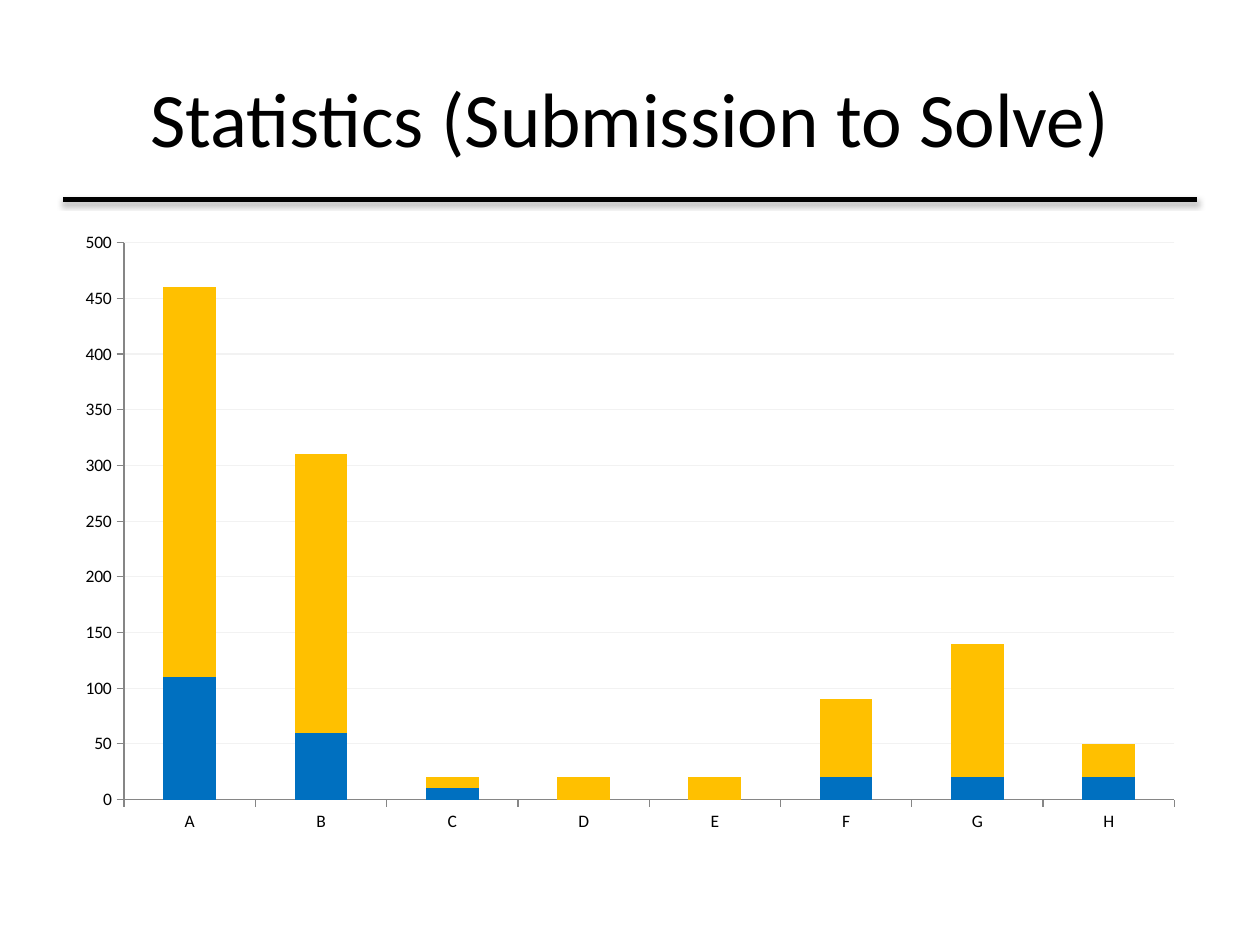
from lxml.etree import SubElement
from pptx import Presentation
from pptx.chart.data import CategoryChartData
from pptx.dml.color import RGBColor
from pptx.enum.chart import XL_CHART_TYPE, XL_TICK_MARK
from pptx.enum.shapes import MSO_CONNECTOR
from pptx.enum.text import MSO_ANCHOR, PP_ALIGN
from pptx.oxml.ns import qn
from pptx.util import Pt

FONT = "Calibri"
LEFT, WIDTH = Pt(36), Pt(648)
PROBLEMS = "ABCDEFGH"
SERIES = [
    ("Series 1", "0070C0", [110, 60, 10, 0, 0, 20, 20, 20]),
    ("Series 2", "FFC000", [350, 250, 10, 20, 20, 70, 120, 30]),
]


def color(hex_string):
    return RGBColor.from_string(hex_string)


def style_font(font, size):
    font.name = FONT
    font.size = Pt(size)
    font.color.rgb = color("000000")


def style_line(line, hex_string, width):
    line.color.rgb = color(hex_string)
    line.width = Pt(width)


def add_title(page, text):
    title = page.shapes.title
    title.left, title.top, title.width, title.height = LEFT, Pt(21.6), WIDTH, Pt(90)
    title.text_frame.text = text
    title.text_frame.vertical_anchor = MSO_ANCHOR.MIDDLE
    paragraph = title.text_frame.paragraphs[0]
    paragraph.alignment = PP_ALIGN.CENTER
    style_font(paragraph.runs[0].font, 44)


def add_soft_shadow(shape):
    """Drop a blurred, 35% black shadow straight below the shape."""
    effects = SubElement(shape._element.spPr, qn("a:effectLst"))
    shadow = SubElement(effects, qn("a:outerShdw"), blurRad=str(Pt(3.1)),
                        dist=str(Pt(1.8)), dir="5400000", rotWithShape="0")
    black = SubElement(shadow, qn("a:srgbClr"), val="000000")
    SubElement(black, qn("a:alpha"), val="35000")


def add_rule(page, top):
    rule = page.shapes.add_connector(
        MSO_CONNECTOR.STRAIGHT, LEFT, top, LEFT + WIDTH, top)
    style_line(rule.line, "000000", 3)
    add_soft_shadow(rule)


def style_axis(axis):
    axis.major_tick_mark = XL_TICK_MARK.OUTSIDE
    axis.minor_tick_mark = XL_TICK_MARK.NONE
    style_line(axis.format.line, "868686", 0.75)
    style_font(axis.tick_labels.font, 10)


def add_stacked_chart(page):
    data = CategoryChartData()
    data.categories = PROBLEMS
    for name, _, values in SERIES:
        data.add_series(name, values)
    chart = page.shapes.add_chart(
        XL_CHART_TYPE.COLUMN_STACKED, LEFT, Pt(126), WIDTH, Pt(356.4), data).chart
    chart.has_legend = False
    chart.has_title = False
    style_font(chart.font, 10)

    plot = chart.plots[0]
    plot.gap_width = 150
    plot.overlap = 100
    plot.vary_by_categories = False
    for series, (_, fill, _) in zip(plot.series, SERIES):
        series.format.fill.solid()
        series.format.fill.fore_color.rgb = color(fill)

    style_axis(chart.category_axis)
    value_axis = chart.value_axis
    style_axis(value_axis)
    value_axis.minimum_scale = 0
    value_axis.maximum_scale = 500
    value_axis.major_unit = 50
    value_axis.has_major_gridlines = True
    style_line(value_axis.major_gridlines.format.line, "F2F2F2", 0.75)


def main():
    deck = Presentation()
    deck.slide_width, deck.slide_height = Pt(720), Pt(540)
    page = deck.slides.add_slide(deck.slide_layouts[5])
    add_rule(page, Pt(114))
    add_title(page, "Statistics (Submission to Solve)")
    add_stacked_chart(page)
    deck.save("out.pptx")


if __name__ == "__main__":
    main()
